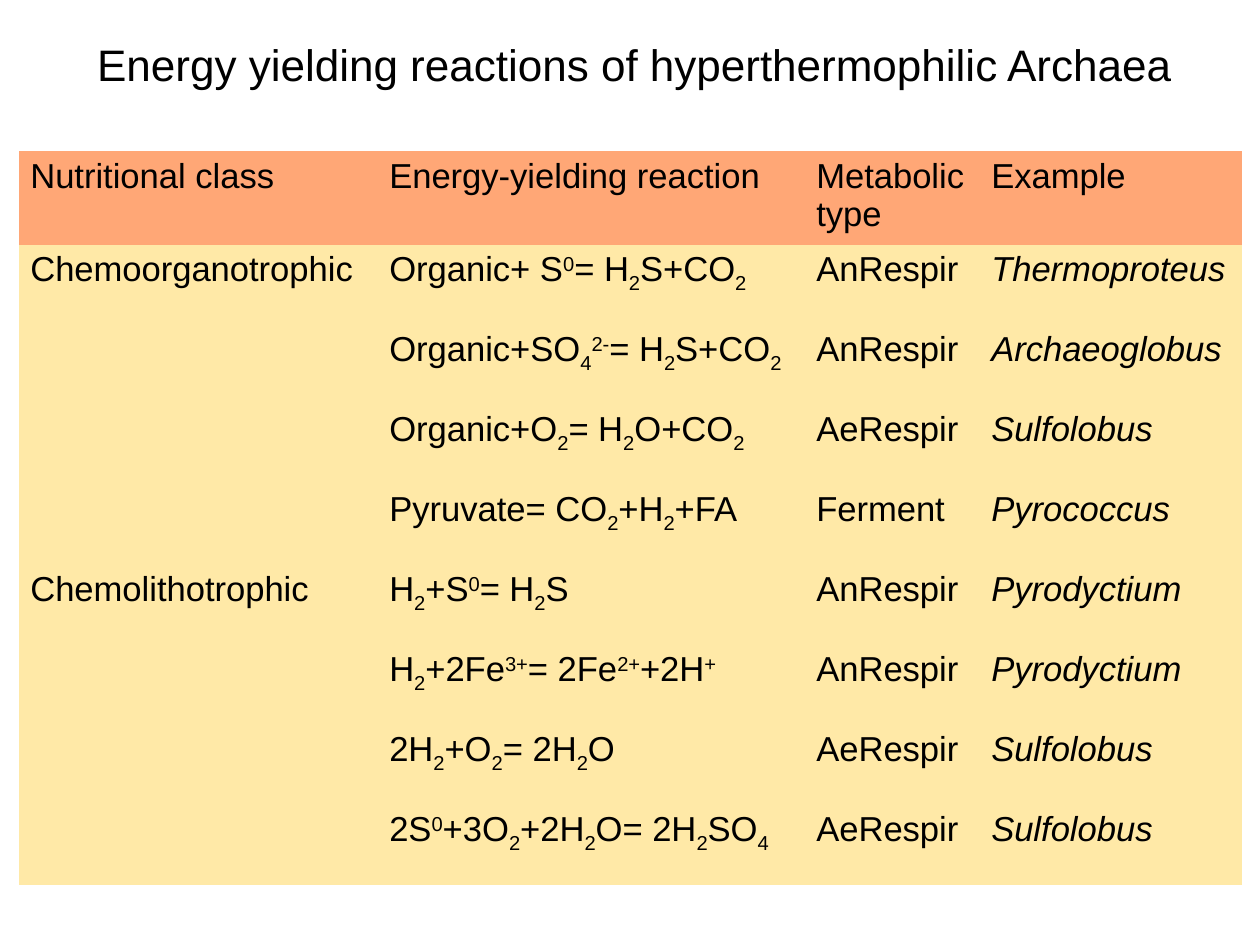
"""Build a slide with a table of energy yielding reactions of Archaea."""
from itertools import chain

from pptx import Presentation
from pptx.dml.color import RGBColor
from pptx.enum.text import MSO_ANCHOR, PP_ALIGN
from pptx.oxml.ns import qn
from pptx.util import Pt

PX = 8071
INK = {"text": "000000", "head": "FFA776", "body": "FFE9A7"}
BASE = {"_": "-25000", "^": "30000"}
PLAIN = "{2D5ABB26-0587-4C30-8999-92F81FD0307C}"
COLS = [359, 427, 175, 262]
HEAD = ["Nutritional class", "Energy-yielding reaction", "Metabolic type", "Example"]
ROWS = [
    ["Chemoorganotrophic", "Organic+ S|^0|= H|_2|S+CO|_2", "AnRespir", "Thermoproteus"],
    ["", "Organic+SO|_4|^2-|= H|_2|S+CO|_2", "AnRespir", "Archaeoglobus"],
    ["", "Organic+O|_2|= H|_2|O+CO|_2", "AeRespir", "Sulfolobus"],
    ["", "Pyruvate= CO|_2|+H|_2|+FA", "Ferment", "Pyrococcus"],
    ["Chemolithotrophic", "H|_2|+S|^0|= H|_2|S", "AnRespir", "Pyrodyctium"],
    ["", "H|_2|+2Fe|^3+|= 2Fe|^2+|+2H|^+", "AnRespir", "Pyrodyctium"],
    ["", "2H|_2|+O|_2|= 2H|_2|O", "AeRespir", "Sulfolobus"],
    ["", "2S|^0|+3O|_2|+2H|_2|O= 2H|_2|SO|_4", "AeRespir", "Sulfolobus"],
]


def place(item, left, top, width, height):
    item.left, item.top = left * PX, top * PX
    item.width, item.height = width * PX, height * PX


def write(para, text, size, slant=False):
    for part in filter(None, text.split("|")):
        run = para.add_run()
        run.text = part.lstrip("_^")
        if part[0] in BASE:
            run._r.get_or_add_rPr().set("baseline", BASE[part[0]])
    font = para.font
    font.name, font.size, font.italic = "Arial", Pt(size), slant
    font.color.rgb = RGBColor.from_string(INK["text"])


deck = Presentation()
deck.slide_width, deck.slide_height = 1260 * PX, 944 * PX
slide = deck.slides.add_slide(deck.slide_layouts[5])

title = slide.shapes.title
place(title, 84, 32, 1100, 64)
frame = title.text_frame
frame.word_wrap = False
frame.vertical_anchor = MSO_ANCHOR.TOP
frame.paragraphs[0].alignment = PP_ALIGN.CENTER
write(frame.paragraphs[0], "Energy yielding reactions of hyperthermophilic Archaea", 28)

grid = slide.shapes.add_table(len(ROWS) + 1, len(COLS), 19 * PX, 151 * PX, sum(COLS) * PX, 734 * PX)
table = grid.table
table.first_row = table.horz_banding = False
table._tbl.tblPr.find(qn("a:tableStyleId")).text = PLAIN
for col, width in zip(table.columns, COLS):
    col.width = width * PX
for row, texts in enumerate(chain([HEAD], ROWS)):
    table.rows[row].height = (80 if row else 94) * PX
    for col, text in enumerate(texts):
        cell = table.cell(row, col)
        cell.fill.solid()
        cell.fill.fore_color.rgb = RGBColor.from_string(INK["body" if row else "head"])
        write(cell.text_frame.paragraphs[0], text, 22, row > 0 and col == 3)

deck.save("out.pptx")
